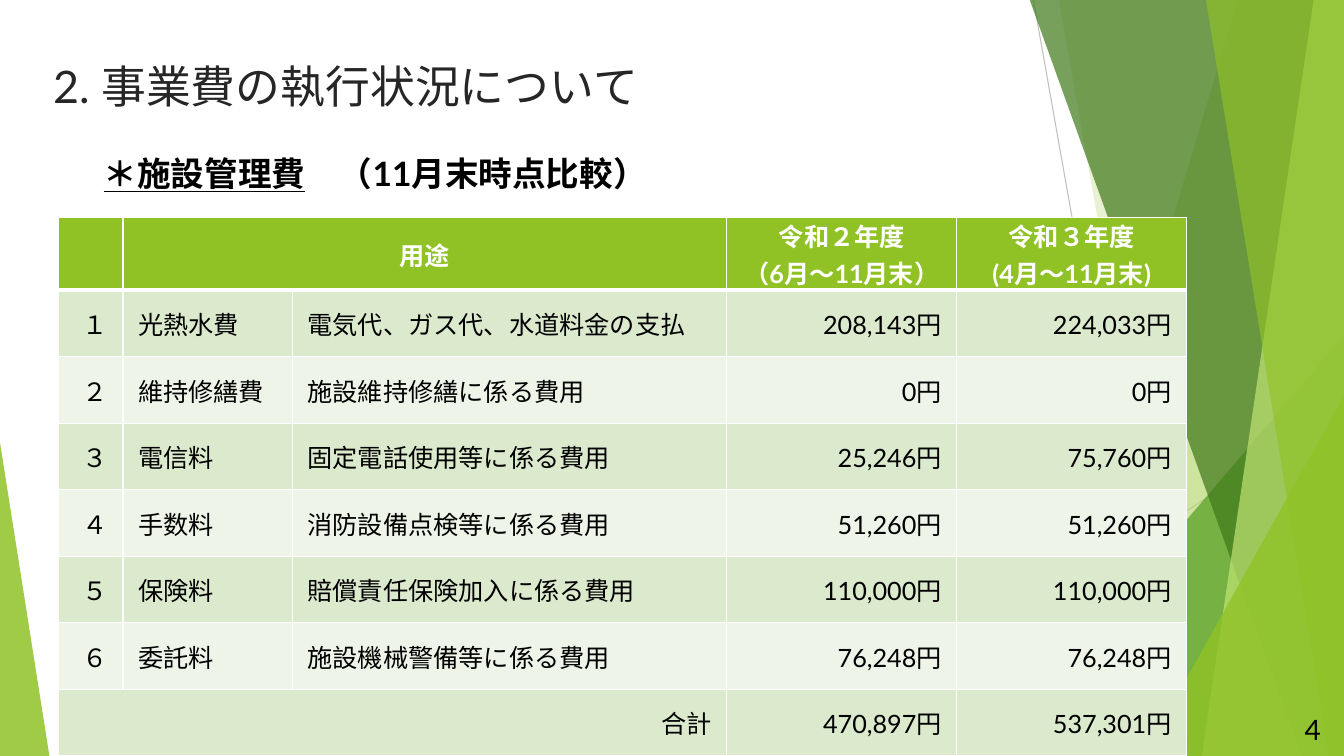
from dataclasses import dataclass

from lxml.etree import SubElement
from pptx import Presentation
from pptx.dml.color import RGBColor
from pptx.enum.shapes import MSO_CONNECTOR as Connector, MSO_SHAPE as Shape
from pptx.enum.text import MSO_ANCHOR as Anchor, PP_ALIGN as Align
from pptx.oxml.ns import qn
from pptx.util import Pt

PX = 9144  # EMU per px, 100 px to the inch


@dataclass(frozen=True)
class Theme:
    font: str = "Lato"
    title_size: int = 32
    subtitle_size: int = 24
    number_size: int = 20
    table_size: int = 18
    ink: str = "000000"
    title_ink: str = "262626"
    white: str = "FFFFFF"
    green: str = "90C226"
    mid_green: str = "54A021"
    dark_green: str = "3F7819"
    pale_green: str = "C0E474"
    bands: tuple = ("DBE9CD", "EEF4E8")
    grey: str = "BFBFBF"
    pale_grey: str = "D9D9D9"


THEME = Theme()
COLUMNS = [64, 168, 431, 228, 228]
HEADER_HEIGHT, ROW_HEIGHT = 72, 66
COLUMN_ALIGN = [Align.RIGHT, Align.LEFT, Align.LEFT, Align.RIGHT, Align.RIGHT]
HEADER = ["", "用途", "", "令和２年度\n（6月～11月末）", "令和３年度\n(4月～11月末)"]
EXPENSES = [
    ["１", "光熱水費", "電気代、ガス代、水道料金の支払", "208,143円", "224,033円"],
    ["２", "維持修繕費", "施設維持修繕に係る費用", "0円", "0円"],
    ["３", "電信料", "固定電話使用等に係る費用", "25,246円", "75,760円"],
    ["４", "手数料", "消防設備点検等に係る費用", "51,260円", "51,260円"],
    ["５", "保険料", "賠償責任保険加入に係る費用", "110,000円", "110,000円"],
    ["６", "委託料", "施設機械警備等に係る費用", "76,248円", "76,248円"],
    ["合計", "", "", "470,897円", "537,301円"],
]
ROWS = [HEADER_HEIGHT] + [ROW_HEIGHT] * len(EXPENSES)


def px(*lengths):
    return [length * PX for length in lengths]


def rgb(color):
    return RGBColor.from_string(color)


def set_font(font, size, color, bold=False):
    font.name = THEME.font
    font.size = Pt(size)
    font.color.rgb = rgb(color)
    font.bold = bold


def paint(shape, color, opacity):
    shape.shadow.inherit = False
    shape.line.fill.background()
    shape.fill.solid()
    shape.fill.fore_color.rgb = rgb(color)
    srgb = shape._element.spPr.find(qn("a:solidFill")).find(qn("a:srgbClr"))
    SubElement(srgb, qn("a:alpha"), val=str(opacity * 1000))


def add_line(group, start, end, color):
    line = group.shapes.add_connector(Connector.STRAIGHT, *px(*start, *end))
    line.line.color.rgb = rgb(color)
    line.line.width = Pt(0.75)
    SubElement(line._element.spPr, qn("a:effectLst"))


def add_band(group, top_left, bottom_left, color, opacity):
    """A band from a slanted left side to the right edge of the slide."""
    outline = group.shapes.build_freeform(top_left, -1, scale=PX)
    outline.add_line_segments([(1333, -1), (1333, 750), (bottom_left, 750)])
    paint(outline.convert_to_shape(), color, opacity)


def add_triangle(group, place, apex, color, opacity):
    triangle = group.shapes.add_shape(Shape.ISOSCELES_TRIANGLE, *px(*place))
    triangle.adjustments[0] = apex
    paint(triangle, color, opacity)


def add_backdrop(page):
    group = page.shapes.add_group_shape()
    add_line(group, (1025, 0), (1158, 750), THEME.grey)
    add_line(group, (1333, 403), (812, 750), THEME.pale_grey)
    add_band(group, 1228, 1004, THEME.green, 30)
    add_band(group, 1050, 1183, THEME.green, 20)
    add_triangle(group, (977, 333, 356, 417), 1, THEME.mid_green, 72)
    add_band(group, 1021, 1291, THEME.dark_green, 70)
    add_band(group, 1303, 1192, THEME.pale_green, 70)
    add_band(group, 1196, 1318, THEME.green, 65)
    add_triangle(group, (1134, 393, 199, 357), 1, THEME.green, 80)
    add_triangle(group, (0, 439, 49, 311), 0, THEME.green, 85)


def add_text(page, place, texts, size, color, bold=False, anchor=Anchor.TOP):
    box = page.shapes.add_textbox(*px(*place))
    frame = box.text_frame
    frame.word_wrap = True
    frame.vertical_anchor = anchor
    para = frame.paragraphs[0]
    set_font(para.font, size, color, bold)
    for text in texts:
        para.add_run().text = text
    return para


def set_borders(cell, bottom_width):
    properties = cell._tc.get_or_add_tcPr()
    for side, width in zip("LRTB", (1, 1, 1, bottom_width)):
        border = SubElement(properties, qn("a:ln" + side), w=str(Pt(width)))
        solid = SubElement(border, qn("a:solidFill"))
        SubElement(solid, qn("a:srgbClr"), val=THEME.white)


def fill_cell(cell, text, align, fill, color, bold=False, margin=None, bottom_width=1):
    set_borders(cell, bottom_width)
    cell.fill.solid()
    cell.fill.fore_color.rgb = rgb(fill)
    if margin is not None:
        cell.margin_left = cell.margin_right = margin * PX
        cell.margin_top = cell.margin_bottom = margin * PX
    cell.text = text
    for para in cell.text_frame.paragraphs:
        para.alignment = align
        set_font(para.font, THEME.table_size, color, bold)


def add_expense_table(page):
    place = px(58, 216, sum(COLUMNS), sum(ROWS))
    table = page.shapes.add_table(len(ROWS), len(COLUMNS), *place).table
    table.first_row = table.horz_banding = False
    for column, width in zip(table.columns, COLUMNS):
        column.width = width * PX
    for row, height in zip(table.rows, ROWS):
        row.height = height * PX

    # Header row
    for index, text in enumerate(HEADER):
        cell = table.cell(0, index)
        fill_cell(cell, text, Align.CENTER, THEME.green, THEME.white, bold=True,
                  margin=0 if index > 2 else None, bottom_width=3)
        cell.vertical_anchor = Anchor.MIDDLE

    # Expenses and total, in alternating bands
    for row, texts in enumerate(EXPENSES, start=1):
        for index, text in enumerate(texts):
            fill_cell(table.cell(row, index), text, COLUMN_ALIGN[index],
                      THEME.bands[(row - 1) % 2], THEME.ink, margin=15)

    table.cell(0, 1).merge(table.cell(0, 2))
    table.cell(len(EXPENSES), 0).merge(table.cell(len(EXPENSES), 2))


def main():
    deck = Presentation()
    deck.slide_width, deck.slide_height = px(1333, 750)
    page = deck.slides.add_slide(deck.slide_layouts[6])

    add_backdrop(page)

    # Title and subtitle
    add_text(page, (43, 32, 1150, 106), ["2. 事業費の執行状況について"],
             THEME.title_size, THEME.title_ink, anchor=Anchor.MIDDLE)
    subtitle = add_text(page, (93, 138, 1019, 68), ["＊施設管理費", "　（11月末時点比較）"],
                        THEME.subtitle_size, THEME.ink, bold=True)
    subtitle.runs[0].font.underline = True
    subtitle.line_spacing = Pt(35)
    subtitle.space_before = Pt(10)

    add_expense_table(page)

    # Page number
    add_text(page, (1284, 702, 43, 44), ["4"], THEME.number_size, THEME.ink)

    deck.save("out.pptx")


if __name__ == "__main__":
    main()
